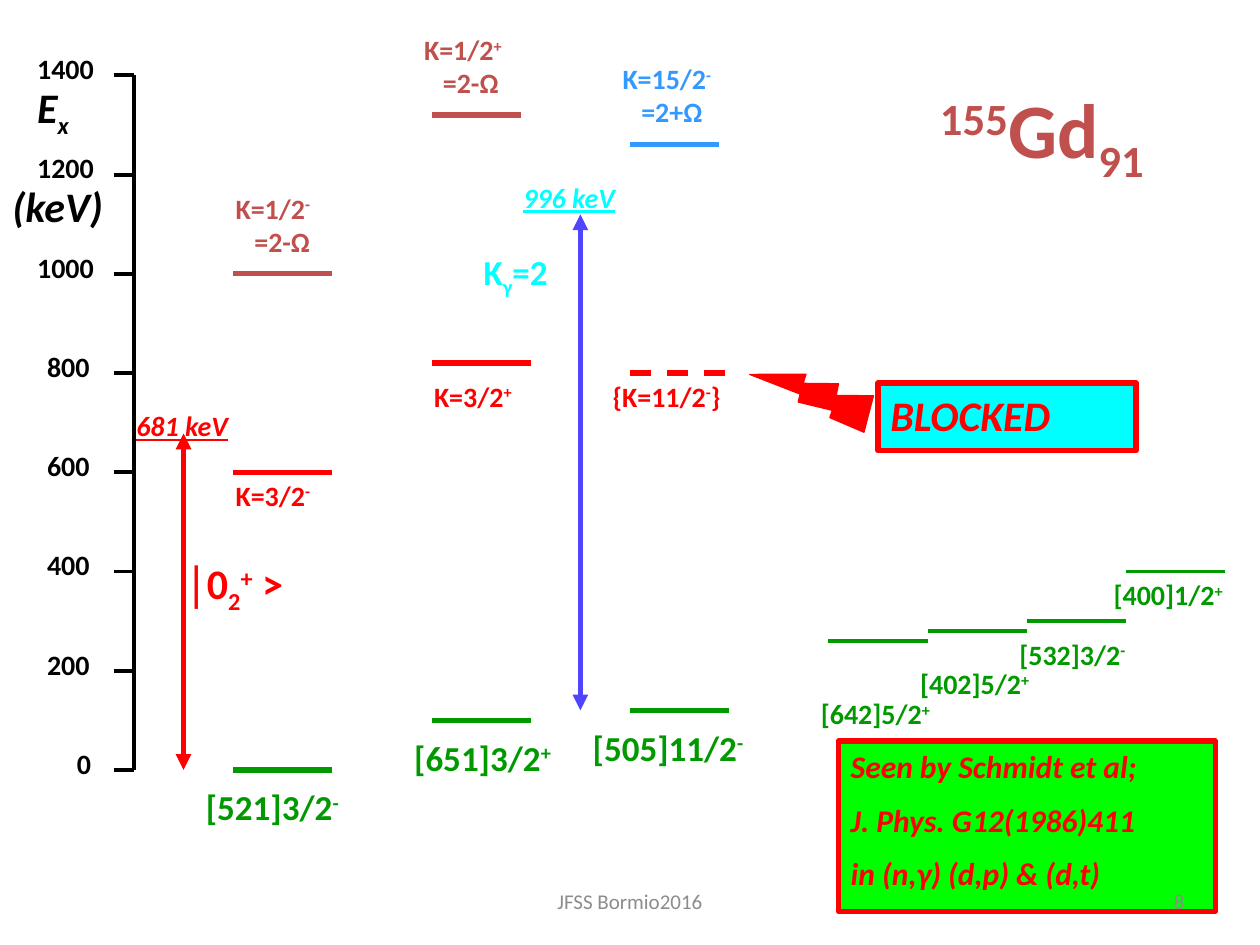
import pptx
import pptx.dml.color
import pptx.enum.dml
import pptx.enum.shapes
import pptx.enum.text
import pptx.oxml
import pptx.oxml.ns
import pptx.util
from lxml import etree

Cm = pptx.util.Cm
Pt = pptx.util.Pt
RGBColor = pptx.dml.color.RGBColor
SHAPE = pptx.enum.shapes.MSO_SHAPE
ALIGN = pptx.enum.text.PP_ALIGN
ANCHOR = pptx.enum.text.MSO_ANCHOR
qn = pptx.oxml.ns.qn

BLACK = RGBColor(0x00, 0x00, 0x00)
GREEN = RGBColor(0x00, 0x99, 0x00)
LIME = RGBColor(0x00, 0xFF, 0x00)
RED = RGBColor(0xFF, 0x00, 0x00)
BRICK = RGBColor(0xC0, 0x50, 0x4D)
BLUE = RGBColor(0x33, 0x99, 0xFF)
VIOLET = RGBColor(0x51, 0x44, 0xFE)
CYAN = RGBColor(0x00, 0xFF, 0xFF)
GREY = RGBColor(0x8C, 0x8C, 0x8C)

AXIS_X = 2.7
ZERO_Y = 15.52
KEV_PER_CM = 100
BASELINES = {"^": "30000", "_": "-25000"}

deck = pptx.Presentation()
deck.slide_width = Cm(25.4)
deck.slide_height = Cm(19.05)
page = deck.slides.add_slide(deck.slide_layouts[6])


def add_line(x1, y1, x2, y2, color, width, dashed=False, arrows=False):
    line = page.shapes.add_connector(
        pptx.enum.shapes.MSO_CONNECTOR.STRAIGHT, Cm(x1), Cm(y1), Cm(x2), Cm(y2))
    line.line.color.rgb = color
    line.line.width = Pt(width)
    if dashed:
        line.line.dash_style = pptx.enum.dml.MSO_LINE.DASH
    if arrows:
        outline = line.line._get_or_add_ln()
        for end in ("a:headEnd", "a:tailEnd"):
            etree.SubElement(outline, qn(end)).set("type", "triangle")
    etree.SubElement(line._element.spPr, qn("a:effectLst"))


def write(box, text, size, color, style="b", align=ALIGN.LEFT, anchor=ANCHOR.TOP):
    """Fill box; "|" parts spans, "^" raises and "_" lowers one, style is from "biu"."""
    frame = box.text_frame
    frame.word_wrap = True
    frame.vertical_anchor = anchor
    for number, words in enumerate(text.split("\n")):
        para = frame.add_paragraph() if number else frame.paragraphs[0]
        para.alignment = align
        font = para.font
        font.name, font.size, font.color.rgb = "Calibri", Pt(size), color
        font.bold, font.italic, font.underline = (key in style for key in "biu")
        if number:
            para.space_before = Pt(size / 2)
        for part in words.split("|"):
            span = para.add_run()
            span.text = part.lstrip("^_")
            if part[0] in BASELINES:
                span._r.get_or_add_rPr().set("baseline", BASELINES[part[0]])


# Energy axis
add_line(AXIS_X, ZERO_Y - 14, AXIS_X, ZERO_Y, BLACK, 2.25)
label_places = {1: (1.3, 0.8), 3: (0.7, 1.6), 4: (0.5, 1.9)}
for energy in range(0, 1401, 200):
    y = ZERO_Y - energy / KEV_PER_CM
    add_line(2.3, y, AXIS_X, y, BLACK, 2.25)
    left, width = label_places[len(str(energy))]
    box = page.shapes.add_textbox(Cm(left), Cm(y - 0.6), Cm(width), Cm(0.93))
    write(box, str(energy), 16, BLACK)

# Levels: left, length, energy, colour, line width
levels = [
    (4.7, 2, 0, GREEN, 3),
    (8.7, 2, 100, GREEN, 3),
    (12.7, 2, 120, GREEN, 3),
    (16.7, 2, 260, GREEN, 2.25),
    (18.7, 2, 280, GREEN, 2.25),
    (20.7, 2, 300, GREEN, 2.25),
    (22.7, 2, 400, GREEN, 2.25),
    (4.7, 2, 600, RED, 3),
    (8.7, 2, 820, RED, 3),
    (12.7, 2, 800, RED, 3),
    (4.7, 2, 1000, BRICK, 3),
    (8.7, 1.8, 1320, BRICK, 3),
    (12.7, 1.8, 1260, BLUE, 3),
]
for left, length, energy, color, width in levels:
    y = ZERO_Y - energy / KEV_PER_CM
    add_line(left, y, left + length, y, color, width, dashed=energy == 800)

add_line(3.7, 8.74, 3.7, ZERO_Y, RED, 3, arrows=True)
add_line(11.7, 4.32, 11.7, 14.32, VIOLET, 3, arrows=True)

# Labels: left, top, width, height, text, size, colour, style
labels = [
    (0.5, 1.52, 1.6, 1.28, "E|_x", 24, BLACK, "bi"),
    (0, 3.52, 2.7, 1.28, "(keV)", 24, BLACK, "bi"),
    (3.9, 15.72, 3.6, 1.1, "[521]3/2|^-", 20, GREEN, "b"),
    (8.1, 14.72, 3.8, 1.1, "[651]3/2|^+", 20, GREEN, "b"),
    (11.7, 14.52, 3.8, 1.1, "[505]11/2|^-", 20, GREEN, "b"),
    (16.3, 13.92, 3, 0.93, "[642]5/2|^+", 16, GREEN, "b"),
    (18.3, 13.32, 3, 0.93, "[402]5/2|^+", 16, GREEN, "b"),
    (20.3, 12.72, 3, 0.93, "[532]3/2|^-", 16, GREEN, "b"),
    (22.2, 11.52, 3.2, 0.93, "[400]1/2|^+", 16, GREEN, "b"),
    (3.5, 11.12, 3, 1.28, "│0|_2|^+| >", 24, RED, "b"),
    (2.5, 8.12, 2.8, 0.93, "681 keV", 16, RED, "biu"),
    (10.3, 3.52, 2.8, 0.93, "996 keV", 16, CYAN, "biu"),
    (4.5, 9.52, 2.2, 0.93, "K=3/2|^-", 16, RED, "b"),
    (8.5, 7.52, 2.4, 0.93, "K=3/2|^+", 16, RED, "b"),
    (12.1, 7.52, 3, 0.93, "{K=11/2|^-|}", 16, RED, "b"),
    (9.5, 4.92, 2.2, 1.1, "K|_γ|=2", 20, CYAN, "b"),
    (18.7, 1.52, 5.8, 2.1, "^155|Gd|_91", 44, BRICK, "b"),
    (4.5, 3.73, 2.4, 1.62, "K=1/2|^-\n=2-Ω", 16, BRICK, "b"),
    (8.3, 0.53, 2.4, 1.62, "K=1/2|^+\n=2-Ω", 16, BRICK, "b"),
    (12.3, 1.12, 2.6, 1.62, "K=15/2|^-\n=2+Ω", 16, BLUE, "b"),
]
for left, top, width, height, text, size, color, style in labels:
    box = page.shapes.add_textbox(Cm(left), Cm(top), Cm(width), Cm(height))
    write(box, text, size, color, style)
    for para in box.text_frame.paragraphs[1:]:
        para.line_spacing = 0.5
        para._p.get_or_add_pPr().set("marL", str(Cm(0.38)))

# Callouts: shape, left, top, width, height, fill, outline width, text, size
callouts = [
    (SHAPE.LIGHTNING_BOLT, 15.7, 6.73, 1.6, 2.39, RED, 0.75, "", 0),
    (SHAPE.RECTANGLE, 17.7, 7.72, 5.2, 1.37, CYAN, 3, "BLOCKED", 24),
    (SHAPE.RECTANGLE, 16.9, 14.94, 7.6, 3.43, LIME, 3,
     "Seen by Schmidt et al;\nJ. Phys. G12(1986)411\nin (n,γ) (d,p) & (d,t)", 18),
]
for kind, left, top, width, height, fill, outline, text, size in callouts:
    shape = page.shapes.add_shape(kind, Cm(left), Cm(top), Cm(width), Cm(height))
    shape.shadow.inherit = False
    shape.fill.solid()
    shape.fill.fore_color.rgb = fill
    shape.line.color.rgb = RED
    shape.line.width = Pt(outline)
    if text:
        write(shape, text, size, RED, "bi")
    else:
        shape.rotation = 139

# Footer
footers = [
    (8.68, 8.04, "JFSS Bormio2016", ALIGN.CENTER),
    (18.2, 5.93, "8", ALIGN.RIGHT),
]
for left, width, text, align in footers:
    box = page.shapes.add_textbox(Cm(left), Cm(17.66), Cm(width), Cm(1.01))
    write(box, text, 12, GREY, "", align, ANCHOR.MIDDLE)

deck.save("out.pptx")
